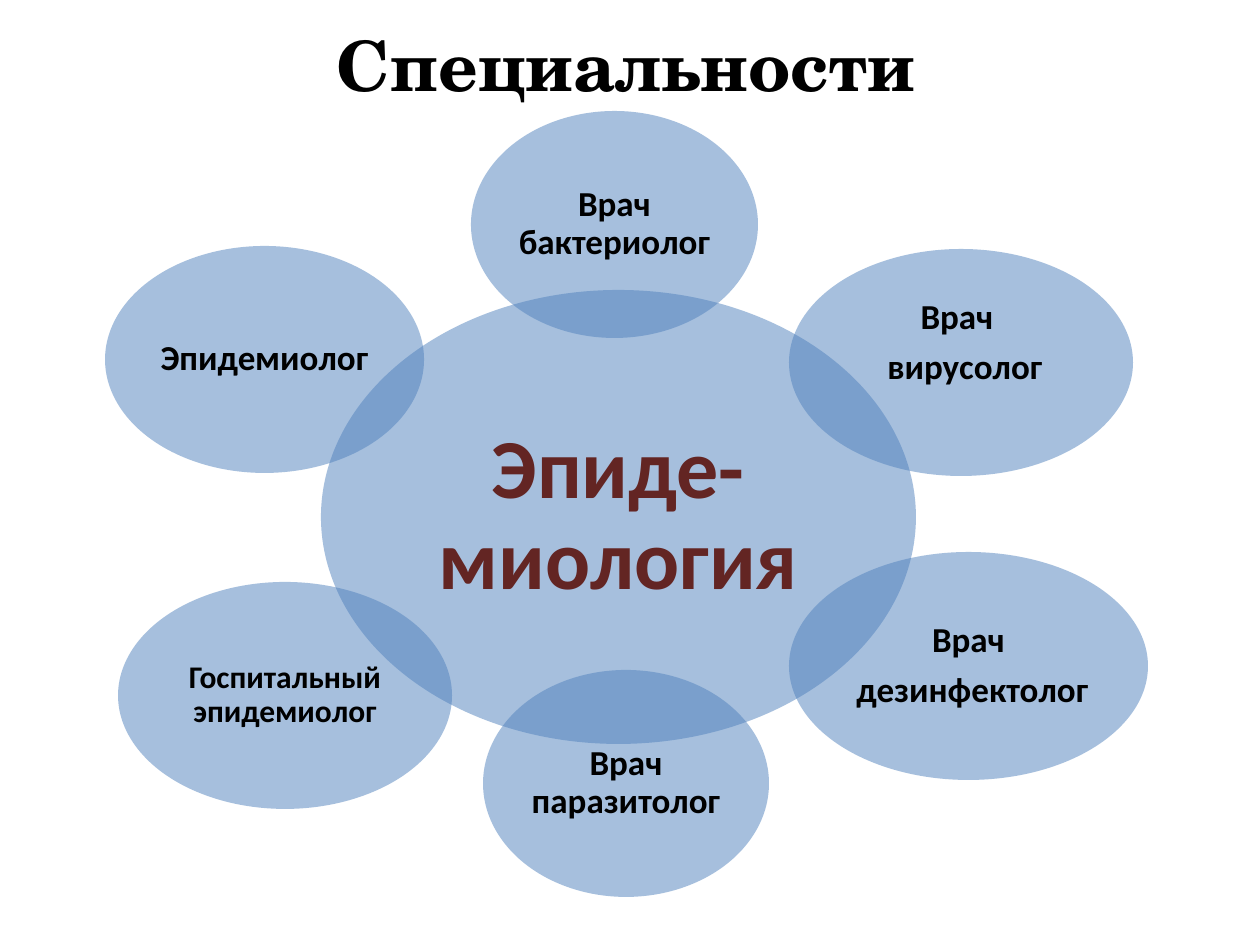
from pptx import Presentation, util as u
from pptx.dml.color import RGBColor
from pptx.enum import shapes, text
from pptx.oxml import parse_xml
from pptx.oxml.ns import nsdecls

# Content: lines, box in px, size in pt, colour, inset px, extra bottom inset px
TITLE = ("Специальности", (59, 20, 1134, 88))
BLACK, BLUE, RED = "000000", "4F81BD", "632523"
CIRCLES = [
    (["Эпиде-миология"], (321, 290, 595, 454), 48, RED, 9, 0),
    (["Врач бактериолог"], (471, 111, 287, 227), 20, BLACK, 4, 0),
    (["Врач ", " вирусолог"], (789, 249, 344, 227), 20, BLACK, 4, 38),
    (["Врач", " дезинфектолог"], (789, 552, 359, 228), 20, BLACK, 4, 0),
    (["Врач паразитолог"], (483, 670, 286, 227), 20, BLACK, 4, 0),
    (["Эпидемиолог"], (105, 246, 319, 227), 20, BLACK, 4, 0),
    (["Госпитальный эпидемиолог"], (118, 582, 334, 227), 18, BLACK, 4, 0),
]


def px(n):
    return u.Emu(round(n * 914400 / 126))


def rgb(color):
    return RGBColor.from_string(color)


def set_all(obj, values):
    for name, value in values.items():
        setattr(obj, name, value)


def write(sp, lines, size, color, font, inset=0, extra=0, spacing=None):
    tf = sp.text_frame
    set_all(tf, dict(word_wrap=True, vertical_anchor=text.MSO_ANCHOR.MIDDLE,
                     margin_left=px(inset), margin_right=px(inset),
                     margin_top=px(inset), margin_bottom=px(inset + extra)))
    for i, line in enumerate(lines):
        p = tf.add_paragraph() if i else tf.paragraphs[0]
        set_all(p, dict(alignment=text.PP_ALIGN.CENTER, line_spacing=spacing,
                        space_after=u.Pt(size * 0.35)))
        r = p.add_run()
        r.text = line
        set_all(r.font, dict(name=font, size=u.Pt(size), bold=True))
        r.font.color.rgb = rgb(color)


prs = Presentation()
prs.slide_width, prs.slide_height = u.Inches(10), u.Inches(7.5)
s = prs.slides.add_slide(prs.slide_layouts[6])

# Title
heading, box = TITLE
write(s.shapes.add_textbox(*map(px, box)), [heading], 39.6, BLACK, "TeX Gyre Schola")

# Centre circle and its satellites, half transparent
for lines, box, size, color, inset, extra in CIRCLES:
    sp = s.shapes.add_shape(shapes.MSO_SHAPE.OVAL, *map(px, box))
    sp.shadow.inherit = False
    sp.line.fill.background()
    sp.fill.solid()
    sp.fill.fore_color.rgb = rgb(BLUE)
    sp.fill._xPr.find(".//{*}srgbClr").append(
        parse_xml(f'<a:alpha {nsdecls("a")} val="50000"/>'))
    write(sp, lines, size, color, "Calibri", inset, extra, 0.9)

prs.save("out.pptx")
